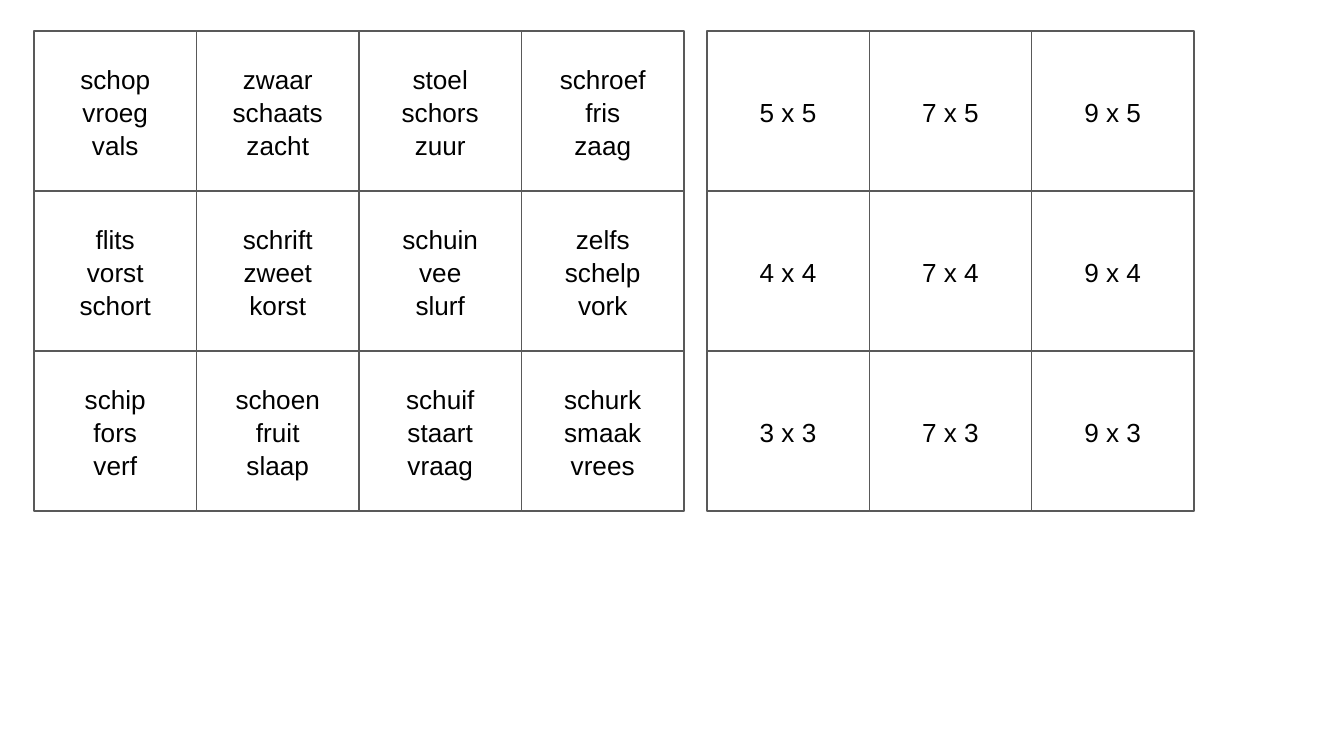
from pptx import Presentation
from pptx.dml.color import RGBColor
from pptx.enum.shapes import MSO_SHAPE
from pptx.enum.text import MSO_ANCHOR, PP_ALIGN
from pptx.util import Inches, Pt

PX = Inches(10) / 1344
WHITE = RGBColor(0xFF, 0xFF, 0xFF)
GREY = RGBColor(0x59, 0x59, 0x59)
BLACK = RGBColor(0x00, 0x00, 0x00)

WORDS = [
    ["schop vroeg vals", "zwaar schaats zacht", "stoel schors zuur", "schroef fris zaag"],
    ["flits vorst schort", "schrift zweet korst", "schuin vee slurf", "zelfs schelp vork"],
    ["schip fors verf", "schoen fruit slaap", "schuif staart vraag", "schurk smaak vrees"],
]
WORD_CARDS = [[card.split() for card in row] for row in WORDS]
SUM_CARDS = [
    [["5 x 5"], ["7 x 5"], ["9 x 5"]],
    [["4 x 4"], ["7 x 4"], ["9 x 4"]],
    [["3 x 3"], ["7 x 3"], ["9 x 3"]],
]


def emu(pixels):
    """Turn a length in px into EMU."""
    return round(pixels * PX)


def add_card(page, box, lines):
    """Draw one outlined card with a centred paragraph for each line."""
    card = page.shapes.add_shape(MSO_SHAPE.RECTANGLE, *map(emu, box))
    card.shadow.inherit = False
    card.fill.solid()
    card.fill.fore_color.rgb = WHITE
    card.line.color.rgb = GREY
    card.line.width = Pt(0.75)
    frame = card.text_frame
    frame.word_wrap = True
    frame.vertical_anchor = MSO_ANCHOR.MIDDLE
    frame.margin_left = frame.margin_right = Inches(0.1)
    frame.margin_top = frame.margin_bottom = Inches(0.1)
    for index, line in enumerate(lines):
        para = frame.add_paragraph() if index else frame.paragraphs[0]
        para.alignment = PP_ALIGN.CENTER
        para.line_spacing = 1.05
        span = para.add_run()
        span.text = line
        span.font.name = "Arial"
        span.font.size = Pt(14)
        span.font.color.rgb = BLACK


def add_card_grid(page, box, rows):
    """Divide the box evenly into a grid of cards."""
    left, top, width, height = box
    card_height = height / len(rows)
    for row_index, row in enumerate(rows):
        card_width = width / len(row)
        for column_index, lines in enumerate(row):
            card_left = left + column_index * card_width
            card_top = top + row_index * card_height
            add_card(page, (card_left, card_top, card_width, card_height), lines)


def main():
    """Build the page with word cards and multiplication cards."""
    deck = Presentation()
    deck.slide_width, deck.slide_height = emu(1344), emu(756)
    page = deck.slides.add_slide(deck.slide_layouts[6])
    page.background.fill.solid()
    page.background.fill.fore_color.rgb = WHITE
    add_card_grid(page, (34, 31, 650, 480), WORD_CARDS)
    add_card_grid(page, (707, 31, 487, 480), SUM_CARDS)
    deck.save("out.pptx")


if __name__ == "__main__":
    main()
